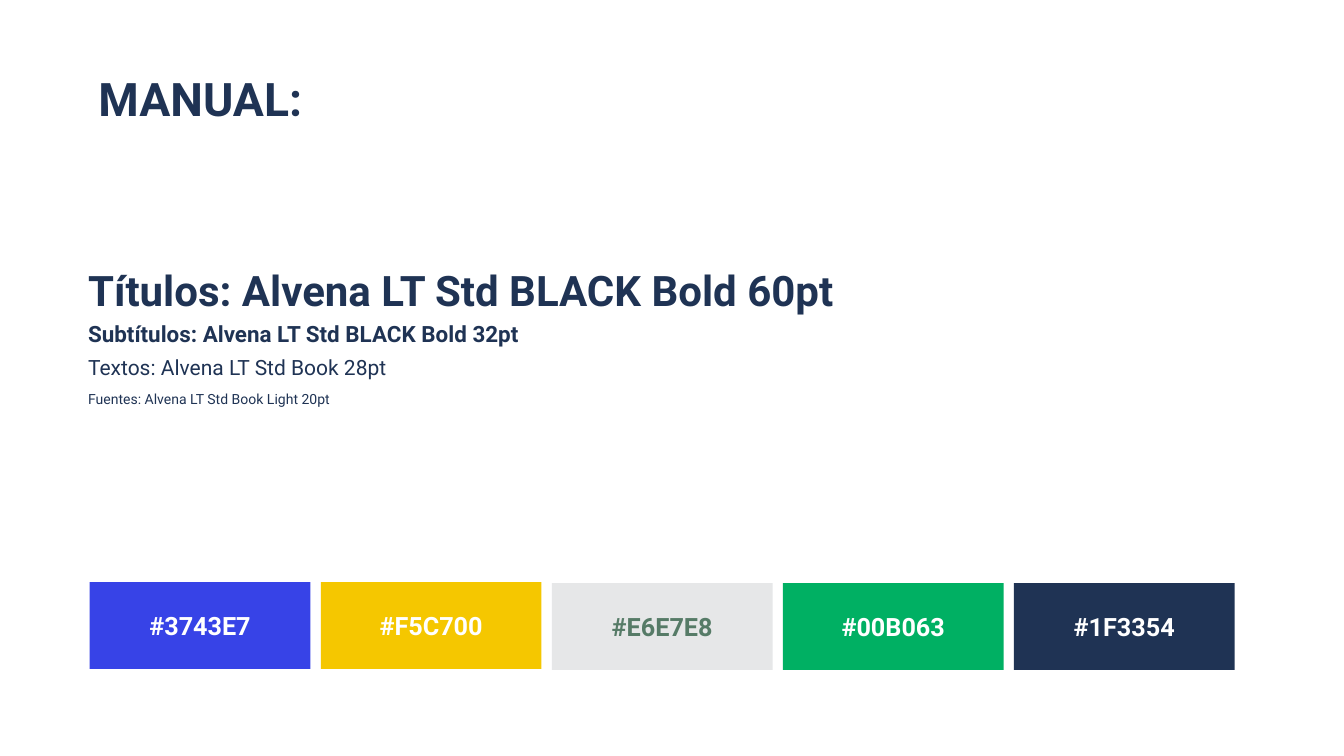
from pptx import Presentation
from pptx.dml.color import RGBColor
from pptx.enum.shapes import MSO_SHAPE
from pptx.enum.text import MSO_ANCHOR, MSO_AUTO_SIZE, PP_ALIGN
from pptx.util import Inches, Pt

RECT = MSO_SHAPE.RECTANGLE
TOP, MIDDLE = MSO_ANCHOR.TOP, MSO_ANCHOR.MIDDLE
LEFT, CENTER, JUSTIFY = PP_ALIGN.LEFT, PP_ALIGN.CENTER, PP_ALIGN.JUSTIFY
GROW = MSO_AUTO_SIZE.SHAPE_TO_FIT_TEXT

THEME = {
    "font": "Roboto",
    "navy": "1F3354",
    "white": "FFFFFF",
    "sage": "567B67",
    "heading": 66,
    "title": 60,
    "subtitle": 32,
    "body": 30,
    "source": 20,
    "swatch": 36,
}

HEADING = "MANUAL:"

# text, size, bold, alignment, top, width, height
TYPE_SAMPLES = [
    ("Títulos: Alvena LT Std BLACK Bold 60pt", "title", True, LEFT, 5.19, 18.26, 1.11),
    ("Subtítulos: Alvena LT Std BLACK Bold 32pt", "subtitle", True, JUSTIFY, 6.3, 9.5, 0.64),
    ("Textos: Alvena LT Std Book 28pt", "body", False, JUSTIFY, 6.99, 9.5, 0.61),
    ("Fuentes: Alvena LT Std Book Light 20pt", "source", False, JUSTIFY, 7.7, 9.5, 0.44),
]
SAMPLE_LEFT = 1.65

# fill, text colour, top
SWATCHES = [
    ("3743E7", "white", 11.55),
    ("F5C700", "white", 11.55),
    ("E6E7E8", "sage", 11.57),
    ("00B063", "white", 11.57),
    ("1F3354", "white", 11.57),
]
SWATCH_LEFT, SWATCH_RIGHT = 1.78, 24.5
SWATCH_W, SWATCH_H = 4.38, 1.72


def write(shape, text, size, color, bold=True, align=CENTER, anchor=TOP, inset=(0.1, 0.05)):
    tf = shape.text_frame
    x, y = (Inches(v) for v in inset)
    frame = {"word_wrap": True, "vertical_anchor": anchor, "margin_left": x,
             "margin_right": x, "margin_top": y, "margin_bottom": y}
    for name, value in frame.items():
        setattr(tf, name, value)
    p = tf.paragraphs[0]
    p.alignment = align
    r = p.add_run()
    r.text = text
    for name, value in {"name": THEME["font"], "size": Pt(THEME[size]), "bold": bold}.items():
        setattr(r.font, name, value)
    r.font.color.rgb = RGBColor.from_string(THEME[color])


def add_type_samples(s):
    for text, size, bold, align, top, width, height in TYPE_SAMPLES:
        box = s.shapes.add_textbox(*map(Inches, (SAMPLE_LEFT, top, width, height)))
        write(box, text, size, "navy", bold, align)
        box.text_frame.auto_size = GROW


def add_swatches(s):
    step = (SWATCH_RIGHT - SWATCH_LEFT - SWATCH_W) / (len(SWATCHES) - 1)
    for i, (fill, color, top) in enumerate(SWATCHES):
        left = SWATCH_LEFT + i * step
        sp = s.shapes.add_shape(RECT, *map(Inches, (left, top, SWATCH_W, SWATCH_H)))
        sp.shadow.inherit = False
        sp.fill.solid()
        sp.fill.fore_color.rgb = RGBColor.from_string(fill)
        sp.line.fill.background()
        write(sp, f"#{fill}", "swatch", color, anchor=MIDDLE)


def main():
    prs = Presentation()
    prs.slide_width, prs.slide_height = Inches(26.67), Inches(15)
    s = prs.slides.add_slide(prs.slide_layouts[6])
    heading = s.shapes.add_textbox(*map(Inches, (1.55, 1.33, 4.85, 2.08)))
    write(heading, HEADING, "heading", "navy", inset=(0.06, 0.06))
    add_type_samples(s)
    add_swatches(s)
    prs.save("out.pptx")


if __name__ == "__main__":
    main()
